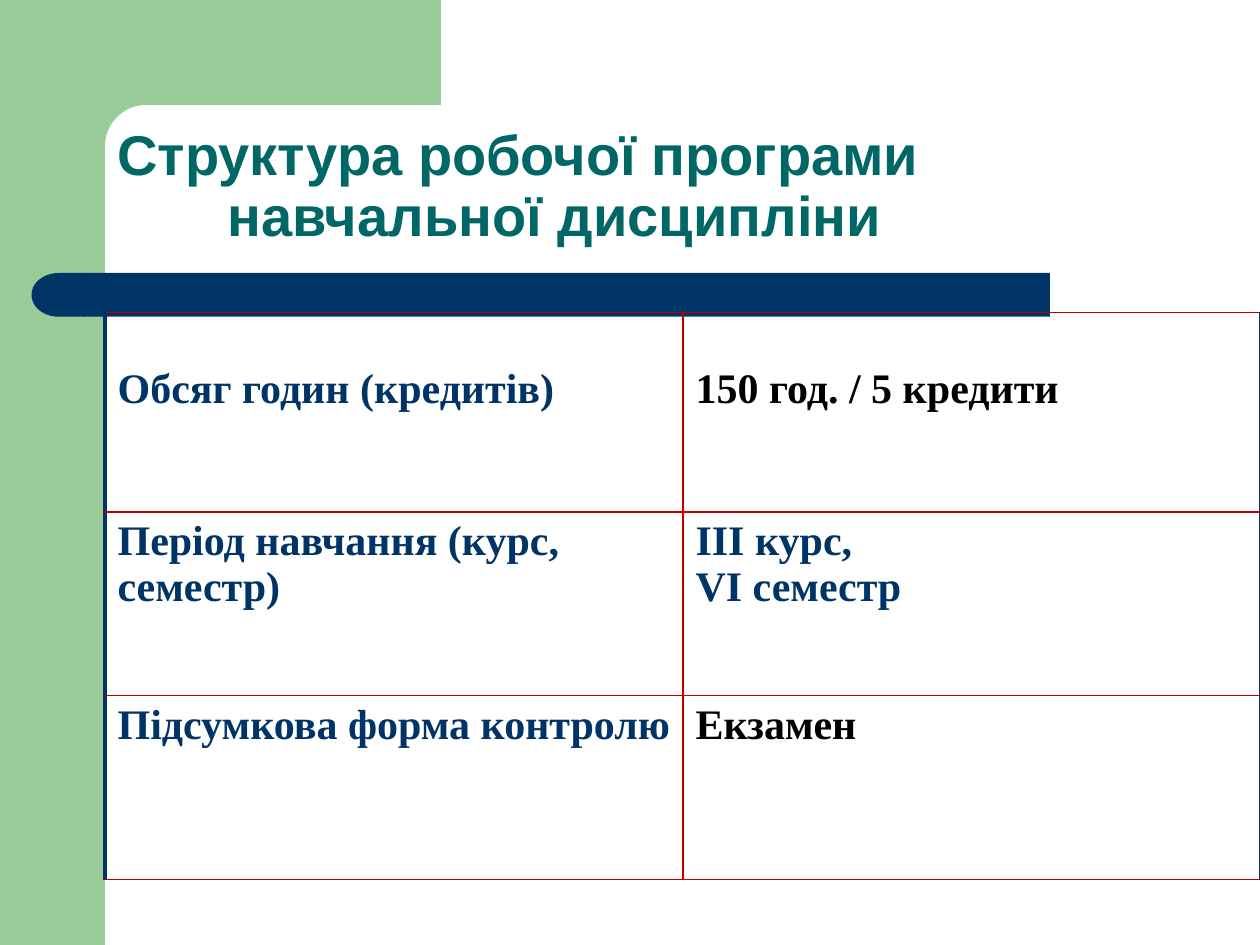
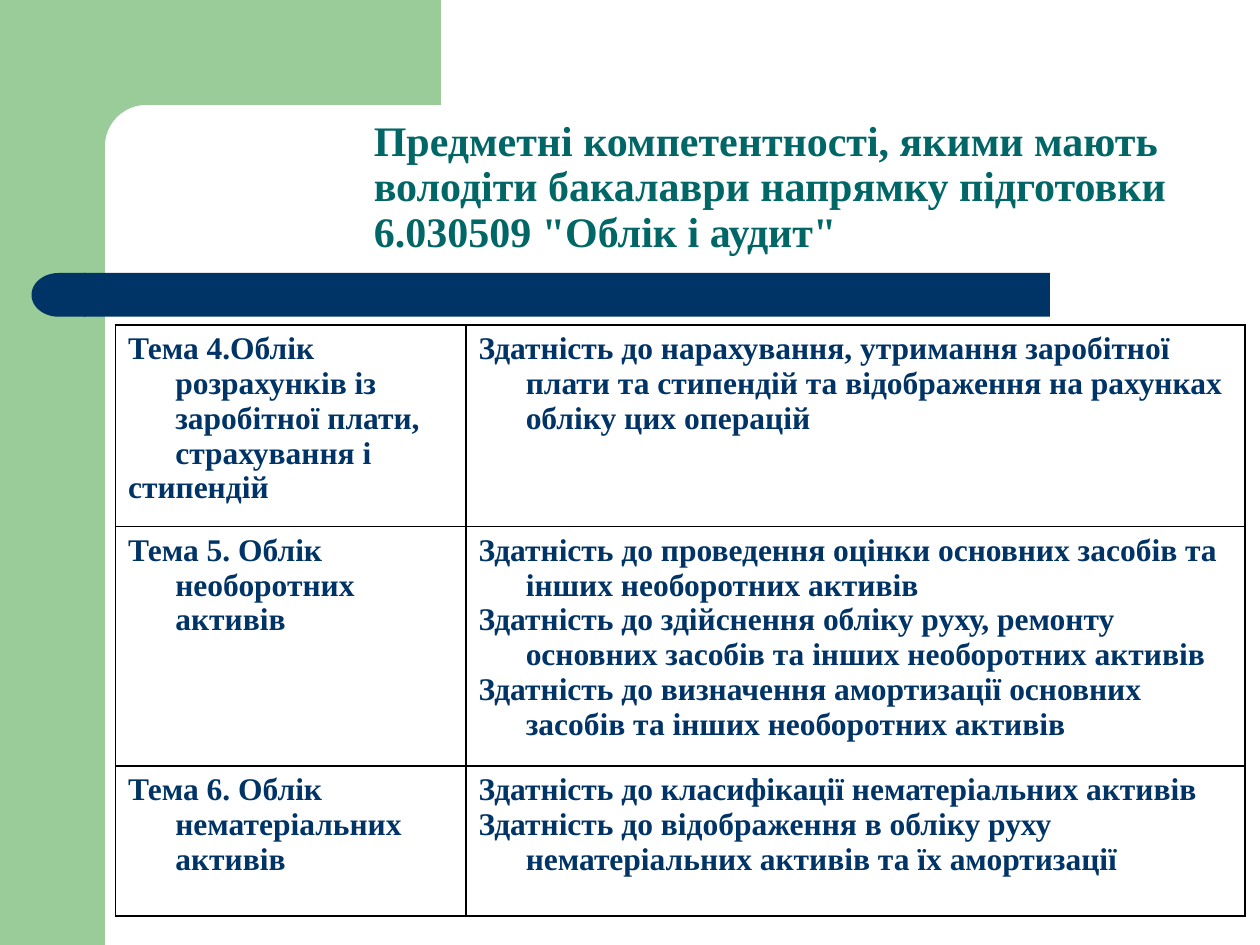
from dataclasses import dataclass
from math import cos, pi, sin

from lxml.etree import SubElement
from pptx import Presentation
from pptx.dml.color import RGBColor
from pptx.enum.shapes import MSO_SHAPE
from pptx.enum.text import MSO_ANCHOR
from pptx.oxml.ns import qn
from pptx.util import Pt


@dataclass(frozen=True)
class Theme:
    """Colours, fonts and type sizes of the deck."""
    green: str = "99CC99"
    navy: str = "003366"
    teal: str = "006666"
    red: str = "C00000"
    black: str = "000000"
    sans: str = "Arial"
    serif: str = "Times New Roman"
    title: int = 32
    body: int = 24
    small: int = 18


T = Theme()
W, H = 720, 540


def paint(sp, color):
    """Fill a shape with one flat colour."""
    sp.shadow.inherit = False
    sp.fill.solid()
    sp.fill.fore_color.rgb = RGBColor.from_string(color)
    sp.line.fill.background()


def add_block(s, kind, box, color):
    """Add a flat preset shape."""
    sp = s.shapes.add_shape(kind, *map(Pt, box))
    paint(sp, color)
    return sp


def add_corner(s, box, side, radius):
    """Add the top block whose inner corner is a quarter circle."""
    x, y, w, h = box
    cx, cy = side + radius, y + h + radius
    angles = [pi / 2 * i / 12 for i in range(13)]
    arc = [(cx - radius * sin(a), cy - radius * cos(a)) for a in angles]
    points = [(x + w, y), (x + w, y + h), *arc, (side, cy + 8), (x, cy + 8)]
    fb = s.shapes.build_freeform(Pt(x), Pt(y))
    fb.add_line_segments([(Pt(px), Pt(py)) for px, py in points], close=True)
    paint(fb.convert_to_shape(), T.green)


def add_backdrop(s, box):
    """Draw the green frame and the navy band."""
    x, y, w, h = box
    side = 60
    add_block(s, MSO_SHAPE.RECTANGLE, (x, y, side, h), T.green)
    add_corner(s, (x + 36, y, 216, 60), x + side, 23.5)
    add_block(s, MSO_SHAPE.RECTANGLE, (x + 48, y + 156, 552, 25), T.navy)
    cap = add_block(s, MSO_SHAPE.FLOWCHART_DELAY, (x + 18, y + 156, 31, 25), T.navy)
    cap.rotation = 180


def write(tf, lines, size, color, font, hang=0):
    """Write each line as a bold paragraph, with an optional hanging indent."""
    for i, text in enumerate(lines):
        p = tf.paragraphs[0] if i == 0 else tf.add_paragraph()
        if hang:
            pPr = p._p.get_or_add_pPr()
            pPr.set("marL", str(Pt(hang)))
            pPr.set("indent", str(-Pt(hang)))
        r = p.add_run()
        r.text = text
        r.font.name, r.font.size, r.font.bold = font, Pt(size), True
        r.font.color.rgb = RGBColor.from_string(color)


def add_title(s, box, lines, size, font, second_indent=0):
    """Add the title, standing on the bottom of its box."""
    tf = s.shapes.add_textbox(*map(Pt, box)).text_frame
    tf.word_wrap = True
    tf.vertical_anchor = MSO_ANCHOR.BOTTOM
    write(tf, lines, size, T.teal, font)
    for i, p in enumerate(tf.paragraphs):
        p.line_spacing = 0.9
        if i and second_indent:
            p._p.get_or_add_pPr().set("marL", str(Pt(second_indent)))


def set_borders(cell, left, right, top, bottom):
    """Give the cell edges, each a (colour, width) pair."""
    tcPr = cell._tc.get_or_add_tcPr()
    edges = zip(("a:lnL", "a:lnR", "a:lnT", "a:lnB"), (left, right, top, bottom))
    for i, (tag, (color, width)) in enumerate(edges):
        ln = SubElement(tcPr, qn(tag), w=str(Pt(width)))
        fill = SubElement(ln, qn("a:solidFill"))
        SubElement(fill, qn("a:srgbClr"), val=color)
        tcPr.insert(i, ln)


def add_grid(s, box, widths, heights, rows, size, inner, outer, hang=0):
    """Add a two-column table; each cell is a (lines, colour) pair."""
    x, y = box
    frame = s.shapes.add_table(len(rows), len(widths), Pt(x), Pt(y),
                               Pt(sum(widths)), Pt(sum(heights)))
    tbl = frame.table
    tbl.first_row = tbl.horz_banding = False
    for col, width in zip(tbl.columns, widths):
        col.width = Pt(width)
    for row, height, cells in zip(tbl.rows, heights, rows):
        row.height = Pt(height)
        for j, (cell, (lines, color)) in enumerate(zip(row.cells, cells)):
            cell.fill.background()
            write(cell.text_frame, lines, size, color, T.serif, hang)
            left = inner if j else outer
            right = outer if j == len(widths) - 1 else inner
            set_borders(cell, left, right, inner, inner)
    return tbl


def build_structure(s):
    """Build the slide on the structure of the course programme."""
    add_backdrop(s, (0, 0, W, H))
    add_title(s, (60, 49, 618, 96.5),
              ["Структура робочої програми", "навчальної дисципліни"],
              T.title, T.sans, second_indent=63)
    rows = [
        ((["Обсяг годин (кредитів)"], T.navy),
         (["150 год. / 5 кредити"], T.black)),
        ((["Період навчання (курс, семестр)"], T.navy),
         (["ІІІ курс,", "VI семестр"], T.navy)),
        ((["Підсумкова форма контролю"], T.navy),
         (["Екзамен"], T.black)),
    ]
    tbl = add_grid(s, (60, 178.5), [330.25] * 2, [114, 105, 105], rows, T.body,
                   inner=(T.red, 1), outer=(T.navy, 2.25))
    for cell in tbl.rows[0].cells:
        cell.margin_top = Pt(30.5)


def build_competences(s):
    """Build the slide on subject competences by topic."""
    add_backdrop(s, (0, 0, W, H))
    add_title(s, (206.5, 26, 477.5, 124),
              ['Предметні компетентності, якими мають володіти бакалаври '
               'напрямку підготовки 6.030509 "Облік і аудит"'],
              T.body, T.serif)
    topics = [
        (["Тема 4.Облік розрахунків із заробітної плати, страхування і",
          "стипендій"],
         ["Здатність до нарахування, утримання заробітної плати та стипендій "
          "та відображення на рахунках обліку цих операцій"]),
        (["Тема 5. Облік необоротних активів"],
         ["Здатність до проведення оцінки основних засобів та інших "
          "необоротних активів",
          "Здатність до здійснення обліку руху, ремонту основних засобів та "
          "інших необоротних активів",
          "Здатність до визначення амортизації основних засобів та інших "
          "необоротних активів"]),
        (["Тема 6. Облік нематеріальних активів"],
         ["Здатність до класифікації нематеріальних активів",
          "Здатність до відображення в обліку руху нематеріальних активів та "
          "їх амортизації"]),
    ]
    rows = [[(lines, T.navy) for lines in topic] for topic in topics]
    line = (T.black, 1)
    add_grid(s, (66, 185.75), [200.25, 445.25], [107, 127, 85.5], rows, T.small,
             inner=line, outer=line, hang=27)


def main():
    """Build and save the deck."""
    prs = Presentation()
    prs.slide_width, prs.slide_height = Pt(W), Pt(H)
    for build in (build_structure, build_competences):
        build(prs.slides.add_slide(prs.slide_layouts[6]))
    prs.save("out.pptx")


if __name__ == "__main__":
    main()
